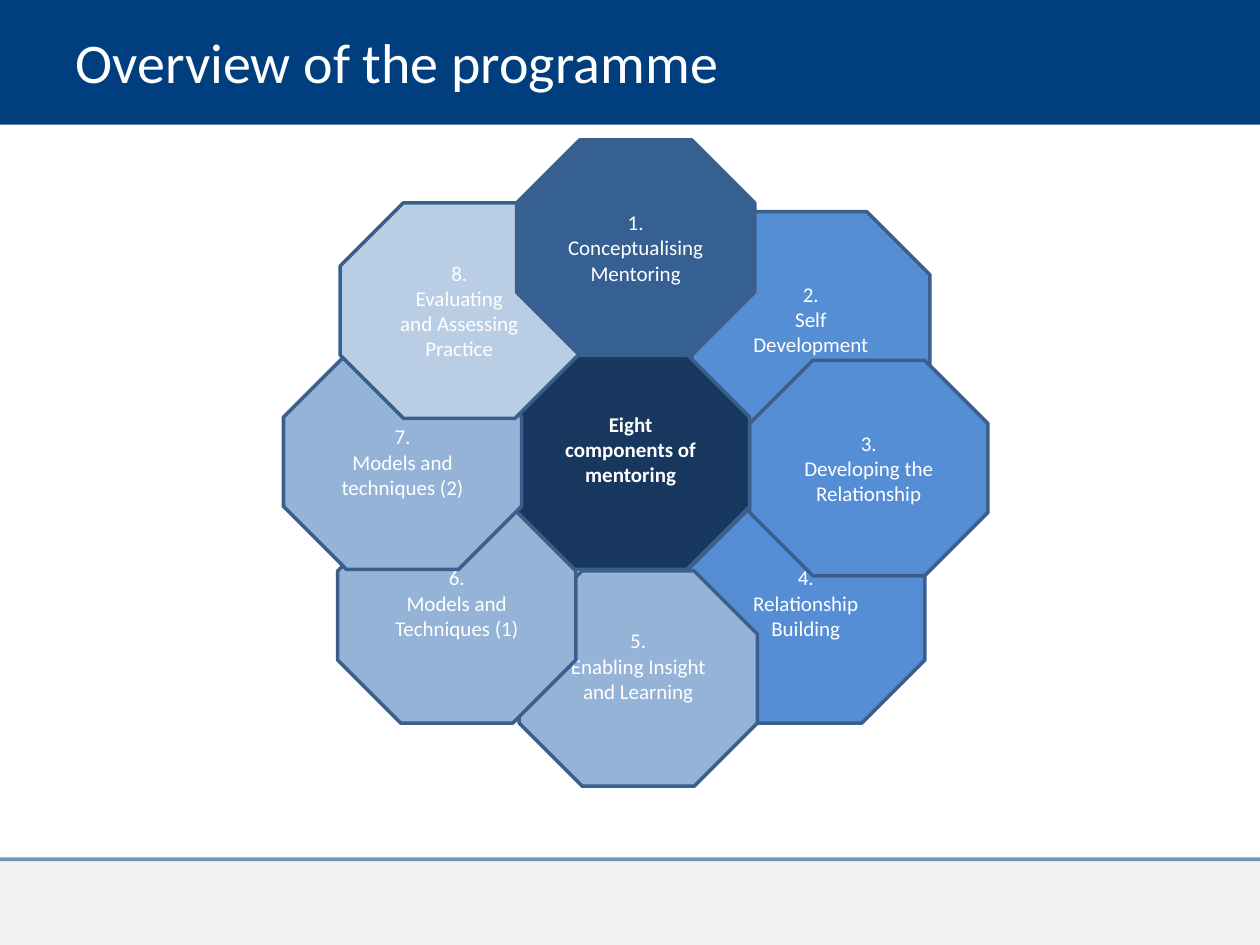
from dataclasses import dataclass

from lxml import etree
from pptx import Presentation
from pptx.dml.color import RGBColor
from pptx.enum.shapes import MSO_CONNECTOR, MSO_SHAPE
from pptx.enum.text import MSO_ANCHOR as Anchor, PP_ALIGN as Align
from pptx.oxml.ns import qn
from pptx.util import Inches, Pt

NAVY = RGBColor(0x00, 0x3E, 0x7E)
GREY = RGBColor(0x80, 0x80, 0x80)
WHITE = RGBColor(0xFF, 0xFF, 0xFF)
OUTLINE = RGBColor(0x3A, 0x5F, 0x8C)
DEEP = RGBColor(0x17, 0x37, 0x5E)
STEEL = RGBColor(0x37, 0x60, 0x92)
BLUE = RGBColor(0x55, 0x8E, 0xD5)
SOFT = RGBColor(0x95, 0xB3, 0xD7)
PALE = RGBColor(0xB9, 0xCD, 0xE5)

FONT = "Calibri"
OCTAGON_WIDTH, OCTAGON_HEIGHT = 1.89, 1.71
INSET = 0.05
LINE_HEIGHT = 0.2


@dataclass(frozen=True)
class Component:
    left: float
    top: float
    fill: RGBColor
    lines: tuple[str, ...]
    raised: bool = False  # text sits half a line above the middle
    bold: bool = False


# Listed from back to front
COMPONENTS = (
    Component(5.45, 4.03, BLUE, ("4.", "Relationship Building"), raised=True),
    Component(5.49, 1.68, BLUE, ("2.", "Self\vDevelopment")),
    Component(5.95, 2.86, BLUE, ("3.", "Developing the Relationship")),
    Component(4.06, 2.81, DEEP, ("Eight components of mentoring",), raised=True, bold=True),
    Component(4.12, 4.53, SOFT, ("5.", "Enabling Insight and Learning"), raised=True),
    Component(2.68, 4.03, SOFT, ("6.", "Models and Techniques (1)"), raised=True),
    Component(2.25, 2.81, SOFT, ("7.", "Models and techniques (2)")),
    Component(2.7, 1.61, PALE, ("8.", "Evaluating\vand Assessing", "Practice")),
    Component(4.1, 1.11, STEEL, ("1.\vConceptualising Mentoring",)),
)


def write_text(shape, lines: tuple[str, ...], *, size: float, align: Align = Align.LEFT,
               bold: bool = False, bottom: float = INSET) -> None:
    frame = shape.text_frame
    frame.word_wrap = True
    frame.vertical_anchor = Anchor.MIDDLE
    frame.margin_bottom = Inches(bottom)
    for index, line in enumerate(lines):
        para = frame.paragraphs[0] if index == 0 else frame.add_paragraph()
        para.text = line
        para.alignment = align
        for span in para.runs:
            span.font.name = FONT
            span.font.size = Pt(size)
            span.font.bold = bold
            span.font.color.rgb = WHITE


def set_opacity(shape, percent: int) -> None:
    color = next(shape._element.spPr.iter(qn("a:srgbClr")))
    etree.SubElement(color, qn("a:alpha"), val=str(percent * 1000))


def add_band(page, top: float, height: float, color: RGBColor):
    band = page.shapes.add_shape(MSO_SHAPE.RECTANGLE, 0, Inches(top), Inches(10), Inches(height))
    band.shadow.inherit = False
    band.fill.solid()
    band.fill.fore_color.rgb = color
    band.line.fill.background()
    return band


def add_component(page, component: Component) -> None:
    octagon = page.shapes.add_shape(
        MSO_SHAPE.OCTAGON, Inches(component.left), Inches(component.top),
        Inches(OCTAGON_WIDTH), Inches(OCTAGON_HEIGHT))
    octagon.shadow.inherit = False
    octagon.fill.solid()
    octagon.fill.fore_color.rgb = component.fill
    octagon.line.color.rgb = OUTLINE
    octagon.line.width = Pt(2)
    bottom = INSET + (LINE_HEIGHT if component.raised else 0)
    write_text(octagon, component.lines, size=12, align=Align.CENTER,
               bold=component.bold, bottom=bottom)


def main() -> None:
    deck = Presentation()
    deck.slide_width, deck.slide_height = Inches(10), Inches(7.5)
    page = deck.slides.add_slide(deck.slide_layouts[6])

    # Header and footer bands
    add_band(page, 0, 0.99, NAVY)
    set_opacity(add_band(page, 6.82, 0.68, GREY), 10)
    rule = page.shapes.add_connector(
        MSO_CONNECTOR.STRAIGHT, 0, Inches(6.82), Inches(10), Inches(6.82))
    rule.line.color.rgb = NAVY
    rule.line.width = Pt(2.25)
    set_opacity(rule, 52)
    etree.SubElement(rule._element.spPr, qn("a:effectLst"))

    # Title
    title = page.shapes.add_textbox(Inches(0.5), Inches(0.14), Inches(6.94), Inches(0.69))
    write_text(title, ("Overview of the programme",), size=32)

    # Flower of octagons
    for component in COMPONENTS:
        add_component(page, component)

    deck.save("out.pptx")


if __name__ == "__main__":
    main()
